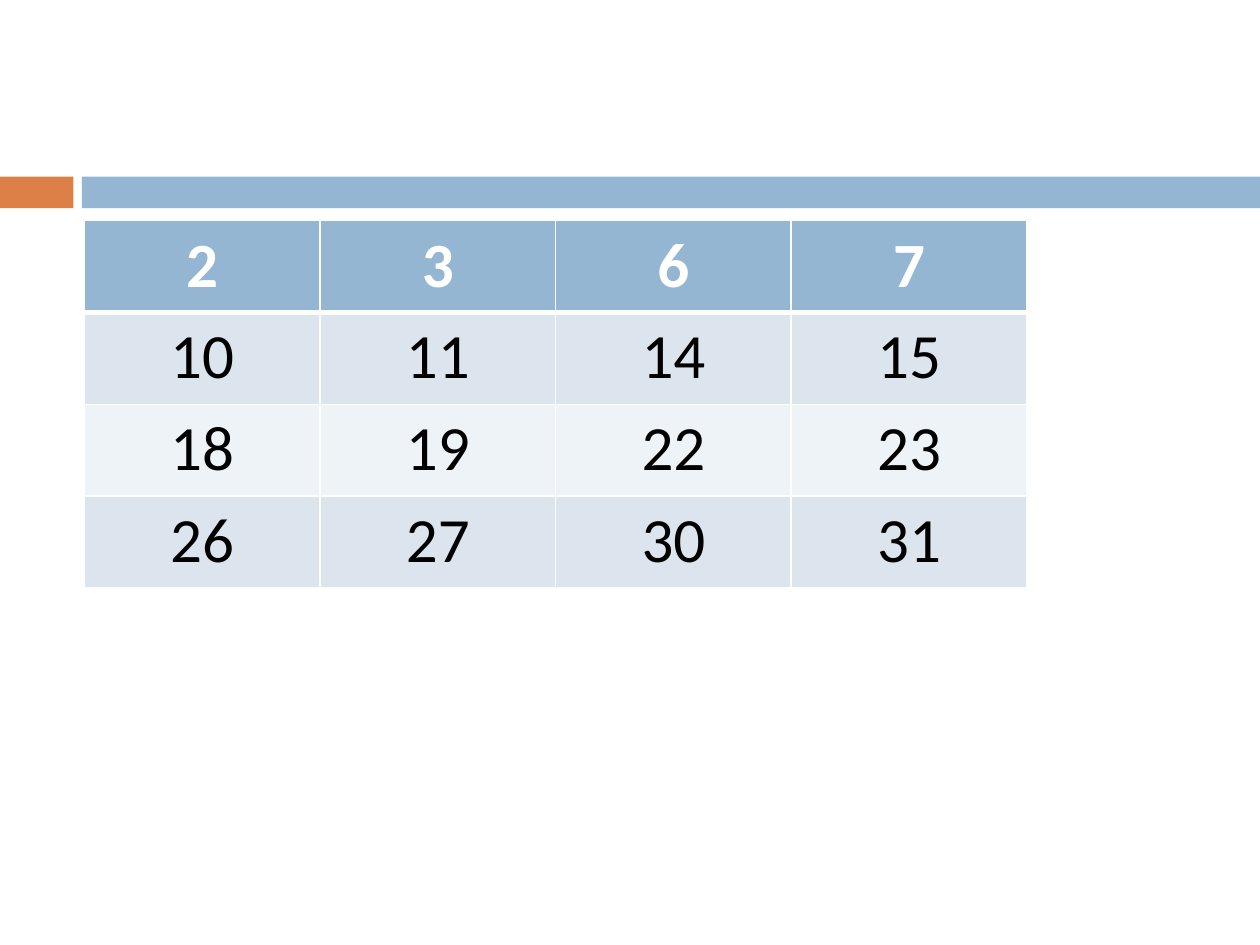
from dataclasses import dataclass

from lxml import etree
from pptx import Presentation
from pptx.dml.color import RGBColor
from pptx.enum import shapes, text
from pptx.oxml import ns
from pptx import util as u

COLORS = {
    "accent": "DD8047",
    "blue": "94B6D2",
    "band": "DCE5EE",
    "light": "EEF3F7",
    "white": "FFFFFF",
    "black": "000000",
}


@dataclass
class Bar:
    left: float
    width: float
    color: str


@dataclass
class Row:
    values: list[int]
    fill: str
    font: str = "black"
    bold: bool = False
    top: float = 1
    bottom: float = 1


BARS = [Bar(0, 1.48, "accent"), Bar(1.65, 23.75, "blue")]
ROWS = [
    Row([2, 3, 6, 7], "blue", "white", True, bottom=3),
    Row([10, 11, 14, 15], "band", top=3),
    Row([18, 19, 22, 23], "light"),
    Row([26, 27, 30, 31], "band"),
]
COL_WIDTH, ROW_HEIGHT = u.Cm(4.75), u.Cm(1.85)


def rgb(name: str) -> RGBColor:
    return RGBColor.from_string(COLORS[name])


def draw_bar(s, bar: Bar) -> None:
    sp = s.shapes.add_shape(shapes.MSO_SHAPE.RECTANGLE, u.Cm(bar.left), u.Cm(3.56),
                            u.Cm(bar.width), u.Cm(0.64))
    sp.shadow.inherit = False
    sp.fill.solid()
    sp.fill.fore_color.rgb = rgb(bar.color)
    sp.line.fill.background()


def set_borders(cell, row: Row) -> None:
    tc_pr = cell._tc.get_or_add_tcPr()
    widths = {"L": 1, "R": 1, "T": row.top, "B": row.bottom}
    for i, (side, width) in enumerate(widths.items()):
        ln = etree.Element(ns.qn(f"a:ln{side}"), w=str(u.Pt(width)))
        fill = etree.SubElement(ln, ns.qn("a:solidFill"))
        etree.SubElement(fill, ns.qn("a:srgbClr"), val=COLORS["white"])
        tc_pr.insert(i, ln)


def fill_cell(cell, value: int, row: Row) -> None:
    cell.fill.solid()
    cell.fill.fore_color.rgb = rgb(row.fill)
    set_borders(cell, row)
    p = cell.text_frame.paragraphs[0]
    p.alignment = text.PP_ALIGN.CENTER
    r = p.add_run()
    r.text = str(value)
    r.font.name = "Calibri"
    r.font.size = u.Pt(36)
    r.font.bold = row.bold
    r.font.color.rgb = rgb(row.font)


def draw_table(s, rows: list[Row]) -> None:
    cols = len(rows[0].values)
    table = s.shapes.add_table(len(rows), cols, u.Cm(1.7), u.Cm(4.45),
                               COL_WIDTH * cols, ROW_HEIGHT * len(rows)).table
    for i, row in enumerate(rows):
        for j, value in enumerate(row.values):
            fill_cell(table.cell(i, j), value, row)


def main() -> None:
    prs = Presentation()
    prs.slide_width, prs.slide_height = u.Cm(25.4), u.Cm(19.05)
    s = prs.slides.add_slide(prs.slide_layouts[6])
    for bar in BARS:
        draw_bar(s, bar)
    draw_table(s, ROWS)
    prs.save("out.pptx")


if __name__ == "__main__":
    main()
